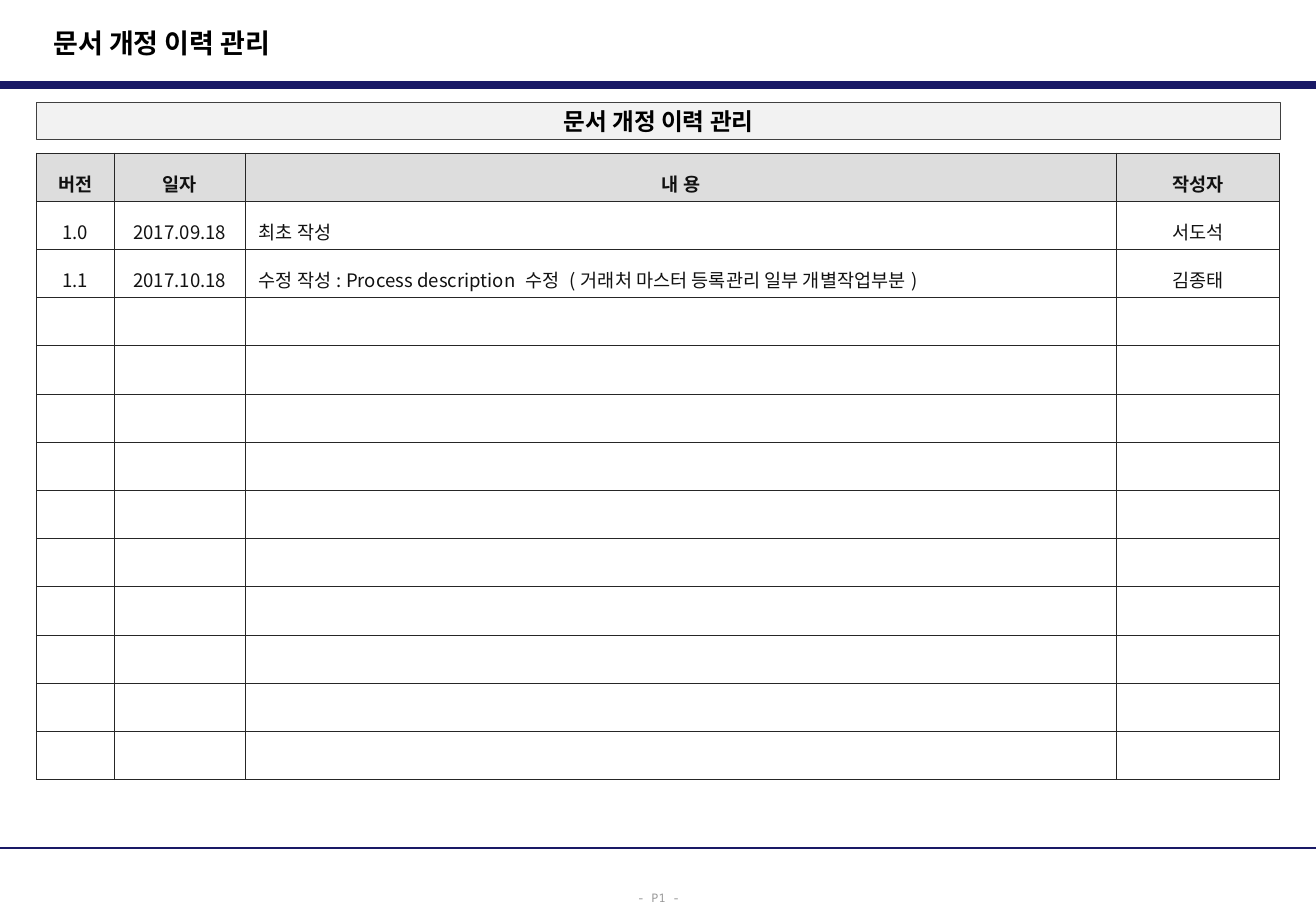
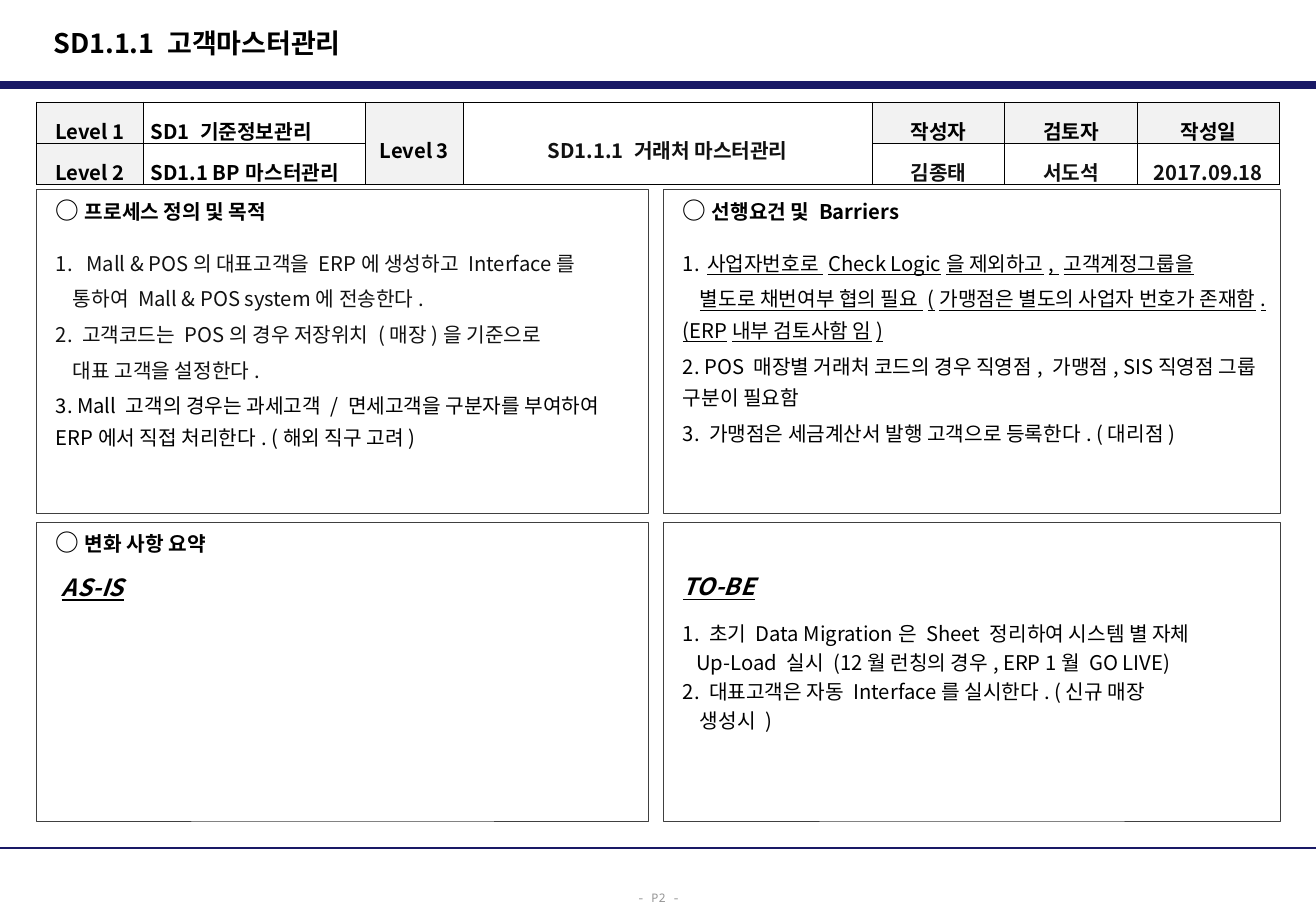
from dataclasses import dataclass

from lxml.etree import SubElement
from pptx import Presentation
from pptx.dml.color import RGBColor
from pptx.enum.shapes import MSO_CONNECTOR as Link, MSO_SHAPE as Preset
from pptx.enum.text import MSO_ANCHOR as Anchor, MSO_AUTO_SIZE as Fit, PP_ALIGN as Align
from pptx.oxml.ns import qn
from pptx.util import Emu, Inches, Pt


@dataclass(frozen=True)
class Theme:
    font: str = "Noto Sans CJK KR"
    mono: str = "Noto Sans Mono"
    navy: str = "191966"
    black: str = "000000"
    ink: str = "111111"
    outline: str = "404040"
    grid: str = "262626"
    footer: str = "969696"
    pale: str = "F2F2F2"
    header: str = "DDDDDD"
    title_size: float = 16
    head_size: float = 14
    body_size: float = 12
    cell_size: float = 11
    footer_size: float = 7


theme = Theme()


def write(para, text, size=theme.body_size, color=theme.black, font=theme.font,
          bold=False, italic=False, underline=False, align=Align.LEFT,
          spacing=1.0, before=0, after=0, margin=0, indent=0, numbered=False):
    para.alignment = align
    para.line_spacing = spacing
    para.space_before, para.space_after = Pt(before), Pt(after)
    props = para._p.get_or_add_pPr()
    props.set("marL", str(Inches(margin)))
    props.set("indent", str(Inches(indent)))
    if numbered:
        SubElement(props, qn("a:buAutoNum"), type="arabicPeriod")
    span = para.add_run()
    span.text = text
    span.font.name, span.font.size = font, Pt(size)
    span.font.bold, span.font.italic, span.font.underline = bold, italic, underline
    span.font.color.rgb = RGBColor.from_string(color)
    SubElement(span._r.get_or_add_rPr(), qn("a:ea"), typeface=font)


def build_table(slide, top, widths, row_height, row_count, border, side, upper, lower):
    frame = slide.shapes.add_table(row_count, len(widths), Inches(left), Inches(top),
                                   Inches(sum(widths)), Inches(row_height * row_count))
    table = frame.table
    table.first_row = table.horz_banding = False
    for column, width in zip(table.columns, widths):
        column.width = Inches(width)
    for row in table.rows:
        row.height = Inches(row_height)
    for cell in table.iter_cells():
        cell.vertical_anchor = Anchor.MIDDLE
        cell.margin_left = cell.margin_right = Inches(side)
        cell.margin_top, cell.margin_bottom = Inches(upper), Inches(lower)
        props = cell._tc.get_or_add_tcPr()
        for edge in ("a:lnL", "a:lnR", "a:lnT", "a:lnB"):
            line = SubElement(props, qn(edge), w=str(Pt(0.5)))
            SubElement(SubElement(line, qn("a:solidFill")), qn("a:srgbClr"), val=border)
        cell.fill.background()
    return table


deck = Presentation()
deck.slide_width, deck.slide_height = Inches(10.83), Inches(7.5)
left, width, top = 0.3, 10.24, 0.84

layout = deck.slide_layouts[5]
heading = layout.placeholders[0]
heading.left, heading.top = Inches(0.34), Inches(0.16)
heading.width, heading.height = Inches(7.11), Inches(0.38)

pages = []
for number, title in enumerate(["문서 개정 이력 관리", "SD1.1.1 고객마스터관리"], 1):
    page = deck.slides.add_slide(layout)
    pages.append(page)
    frame = page.shapes.title.text_frame
    frame.vertical_anchor, frame.auto_size = Anchor.MIDDLE, Fit.NONE
    write(frame.paragraphs[0], title, size=theme.title_size, bold=True)
    box = page.shapes.add_textbox(Inches(5.14), Inches(7.25), Inches(0.56), Inches(0.25))
    box.text_frame.word_wrap = False
    write(box.text_frame.paragraphs[0], f"- P{number} -", size=theme.footer_size,
          color=theme.footer, font=theme.mono, align=Align.CENTER, spacing=1.3)

history, process = pages

for height, weight in [(0.7, 4.5), (6.98, 1.5)]:
    rule = history.shapes.add_connector(Link.STRAIGHT, Emu(0), Inches(height),
                                        deck.slide_width, Inches(height))
    rule.line.color.rgb = RGBColor.from_string(theme.navy)
    rule.line.width = Pt(weight)
    SubElement(rule._element.spPr, qn("a:effectLst"))
    layout.shapes.element.append(rule._element)

banner = history.shapes.add_shape(Preset.RECTANGLE, Inches(left), Inches(top),
                                  Inches(width), Inches(0.31))
banner.shadow.inherit = False
banner.fill.solid()
banner.fill.fore_color.rgb = RGBColor.from_string(theme.pale)
banner.line.color.rgb = RGBColor.from_string(theme.outline)
banner.line.width = Pt(0.5)
banner.text_frame.vertical_anchor = Anchor.MIDDLE
write(banner.text_frame.paragraphs[0], "문서 개정 이력 관리", size=theme.head_size,
      bold=True, align=Align.CENTER)

revisions = [
    ["버전", "일자", "내 용", "작성자"],
    ["1.0", "2017.09.18", "최초 작성", "서도석"],
    ["1.1", "2017.10.18",
     "수정 작성: Process description 수정 (거래처 마스터 등록관리 일부 개별작업부분)", "김종태"],
]
table = build_table(history, 1.26, [0.64, 1.08, 7.17, 1.34], 5.16 / 13, 13,
                    theme.grid, 0.11, 0.05, 0.02)
for row, values in enumerate(revisions):
    for column, text in enumerate(values):
        cell = table.cell(row, column)
        if row == 0:
            cell.fill.solid()
            cell.fill.fore_color.rgb = RGBColor.from_string(theme.header)
        write(cell.text_frame.paragraphs[0], text, size=theme.cell_size, color=theme.ink,
              bold=row == 0, spacing=1.3,
              align=Align.LEFT if row and column == 2 else Align.CENTER)

panels = [
    (0, 0, "프로세스 정의 및 목적", [
        ("Mall & POS의 대표고객을 ERP에 생성하고 Interface를",
         dict(numbered=True, margin=0.25, indent=-0.25, color=theme.ink)),
        ("통하여 Mall & POS system에 전송한다.", dict(indent=0.14, color=theme.ink)),
        ("2. 고객코드는 POS의 경우 저장위치 (매장)을 기준으로", dict(color=theme.ink)),
        ("대표 고객을 설정한다.", dict(indent=0.14, color=theme.ink)),
        ("3. Mall 고객의 경우는 과세고객 / 면세고객을 구분자를 부여하여 "
         "ERP에서 직접 처리한다. (해외 직구 고려)", {}),
    ]),
    (1, 0, "선행요건 및 Barriers", [
        ("사업자번호로 Check Logic을 제외하고, 고객계정그룹을",
         dict(numbered=True, margin=0.2, indent=-0.2, underline=True)),
        ("별도로 채번여부 협의 필요 (가맹점은 별도의 사업자 번호가 존재함. "
         "(ERP내부 검토사함 임)", dict(indent=0.14, underline=True)),
        ("2. POS 매장별 거래처 코드의 경우 직영점, 가맹점, SIS직영점 그룹 구분이 필요함", {}),
        ("3. 가맹점은 세금계산서 발행 고객으로 등록한다. (대리점)", {}),
    ]),
    (0, 1, "변화 사항 요약", [
        ("AS-IS", dict(size=theme.head_size, bold=True, italic=True, underline=True,
                       indent=0.05, spacing=1.0, before=0)),
    ]),
    (1, 1, None, [
        ("TO-BE", dict(size=theme.head_size, bold=True, italic=True, underline=True,
                       spacing=1.0, before=0, after=9.5)),
        ("1. 초기 Data Migration은 Sheet 정리하여 시스템 별 자체",
         dict(spacing=1.2, before=0)),
        ("Up-Load 실시 (12월 런칭의 경우, ERP 1월 GO LIVE)",
         dict(indent=0.11, spacing=1.2, before=0)),
        ("2. 대표고객은 자동 Interface를 실시한다. (신규 매장", dict(spacing=1.2, before=0)),
        ("생성시 )", dict(indent=0.14, spacing=1.2, before=0)),
    ]),
]
panel_columns = [(left, 5.04), (5.46, 5.08)]
panel_rows = [(1.56, 2.67), (4.3, 2.46)]
for column, row, head, lines in panels:
    (x, wide), (y, tall) = panel_columns[column], panel_rows[row]
    panel = process.shapes.add_shape(Preset.RECTANGLE, Inches(x), Inches(y),
                                     Inches(wide), Inches(tall))
    panel.shadow.inherit = False
    panel.fill.background()
    panel.line.color.rgb = RGBColor.from_string(theme.outline)
    panel.line.width = Pt(0.5)
    frame = panel.text_frame
    frame.word_wrap, frame.vertical_anchor = True, Anchor.TOP
    frame.margin_left, frame.margin_right = Inches(0.16), Inches(0.1)
    frame.margin_top = Inches(0.05 if head else 0.41)
    para = frame.paragraphs[0]
    if head:
        write(para, "○ ", size=theme.head_size, bold=True)
        write(para, head, bold=True, after=9.5)
        para = frame.add_paragraph()
    for index, (text, style) in enumerate(lines):
        para = frame.add_paragraph() if index else para
        write(para, text, **{"spacing": 1.3, "before": 2.4, **style})

levels = [
    ["Level 1", "SD1 기준정보관리", "Level 3", "SD1.1.1 거래처 마스터관리",
     "작성자", "검토자", "작성일"],
    ["Level 2", "SD1.1 BP마스터관리", None, None, "김종태", "서도석", "2017.09.18"],
]
table = build_table(process, top, [0.88, 1.83, 0.8, 3.37, 1.09, 1.09, 1.17], 0.34, 2,
                    theme.black, 0.06, 0.04, 0.01)
for column in (2, 3):
    table.cell(0, column).merge(table.cell(1, column))
for row, values in enumerate(levels):
    for column, text in enumerate(values):
        if text is None:
            continue
        cell = table.cell(row, column)
        label = column in (0, 2) or (row == 0 and column > 3)
        if label:
            cell.fill.solid()
            cell.fill.fore_color.rgb = RGBColor.from_string(theme.pale)
        write(cell.text_frame.paragraphs[0], text, bold=True, spacing=1.3,
              color=theme.black if label or column == 1 else theme.ink,
              align=Align.LEFT if column == 1 else Align.CENTER)

deck.save("out.pptx")
